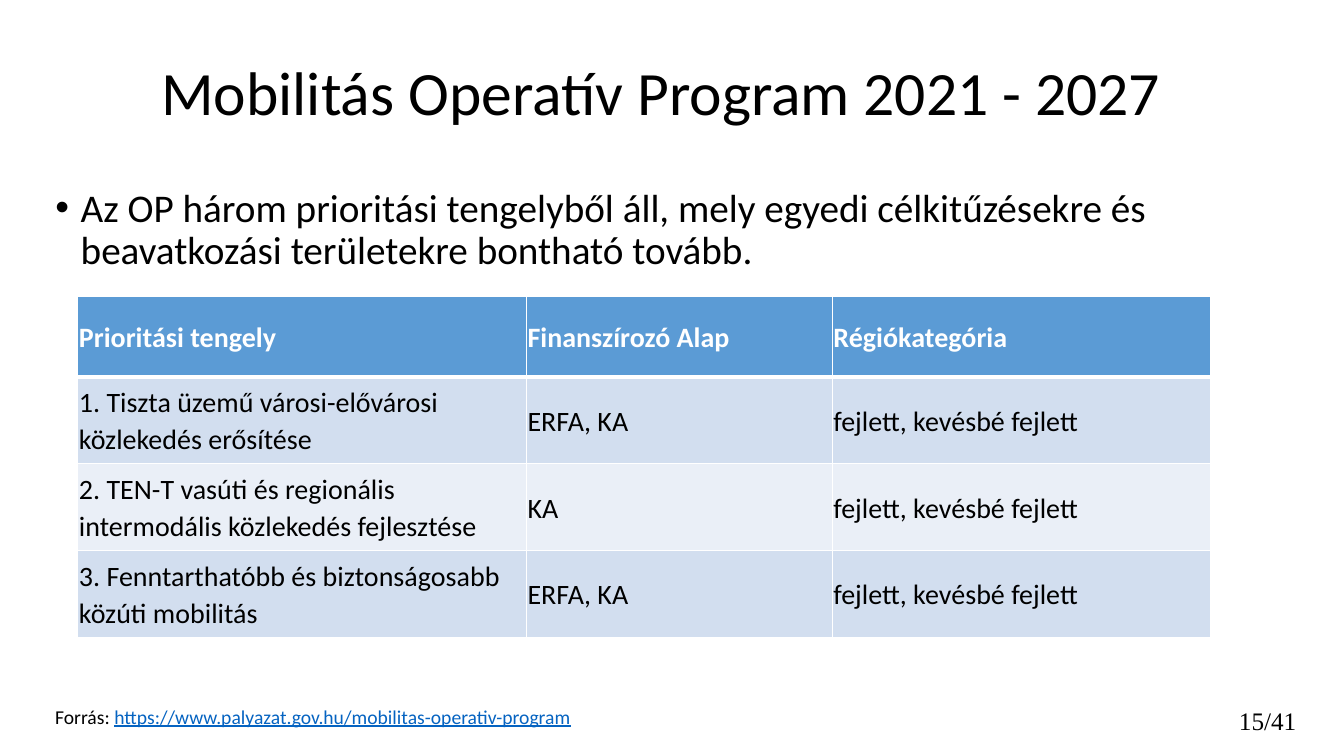
from dataclasses import dataclass

from lxml.etree import SubElement
from pptx import Presentation
from pptx.dml.color import RGBColor
from pptx.enum.text import MSO_ANCHOR, MSO_AUTO_SIZE, PP_ALIGN
from pptx.oxml.ns import qn
from pptx.util import Cm, Pt


@dataclass(frozen=True)
class Theme:
    """Colours, fonts and type sizes of the deck."""
    text: str = "000000"
    white: str = "FFFFFF"
    header: str = "5B9BD5"
    bands: tuple = ("D2DEEF", "EAEFF7")
    link: str = "0563C1"
    font: str = "Calibri"
    number_font: str = "Times New Roman"
    title: int = 44
    body: int = 28
    table: int = 20
    number: int = 18
    source: int = 14


THEME = Theme()
ROWS = [
    ("Prioritási tengely", "Finanszírozó Alap", "Régiókategória"),
    ("1. Tiszta üzemű városi-elővárosi közlekedés erősítése", "ERFA, KA", "fejlett, kevésbé fejlett"),
    ("2. TEN-T vasúti és regionális intermodális közlekedés fejlesztése", "KA", "fejlett, kevésbé fejlett"),
    ("3. Fenntarthatóbb és biztonságosabb közúti mobilitás", "ERFA, KA", "fejlett, kevésbé fejlett"),
]
COLUMN_SHARES = (0.396, 0.27, 0.334)


def add_run(p, text, size, color=THEME.text, font=THEME.font, bold=False, underline=False):
    """Append a formatted run to a paragraph."""
    r = p.add_run()
    r.text = text
    r.font.name, r.font.size = font, Pt(size)
    r.font.bold, r.font.underline = bold, underline
    r.font.color.rgb = RGBColor.from_string(color)


def place(sp, box, anchor=MSO_ANCHOR.TOP):
    """Move a text shape to its box and return its first paragraph."""
    sp.left, sp.top, sp.width, sp.height = map(Cm, box)
    tf = sp.text_frame
    tf.word_wrap, tf.auto_size, tf.vertical_anchor = True, MSO_AUTO_SIZE.NONE, anchor
    p = tf.paragraphs[0]
    p.space_before = Pt(0)
    return p


def add_title(s, box, text):
    """Fill the title placeholder."""
    p = place(s.shapes.title, box, MSO_ANCHOR.MIDDLE)
    p.alignment, p.line_spacing = PP_ALIGN.LEFT, 0.9
    add_run(p, text, THEME.title)


def add_body(s, box, text):
    """Fill the body placeholder with one bullet."""
    p = place(s.placeholders[1], box)
    p.line_spacing = 0.9
    pPr = p._p.get_or_add_pPr()
    pPr.set("marL", str(Cm(0.64)))
    pPr.set("indent", str(-Cm(0.64)))
    SubElement(pPr, qn("a:buFont"), typeface="Arial")
    SubElement(pPr, qn("a:buChar"), char="•")
    add_run(p, text, THEME.body)


def add_borders(cell, bottom):
    """Draw white lines around a cell."""
    tcPr = cell._tc.get_or_add_tcPr()
    for side, width in (("lnL", 1), ("lnR", 1), ("lnT", 1), ("lnB", bottom)):
        ln = SubElement(tcPr, qn(f"a:{side}"), w=str(Pt(width)))
        fill = SubElement(ln, qn("a:solidFill"))
        SubElement(fill, qn("a:srgbClr"), val=THEME.white)


def fill_cell(cell, text, row):
    """Write and format one table cell."""
    header = row == 0
    cell.margin_left = cell.margin_right = cell.margin_top = cell.margin_bottom = Cm(0.03)
    cell.vertical_anchor = MSO_ANCHOR.MIDDLE
    add_borders(cell, 3 if header else 1)
    cell.fill.solid()
    color = THEME.header if header else THEME.bands[(row - 1) % 2]
    cell.fill.fore_color.rgb = RGBColor.from_string(color)
    p = cell.text_frame.paragraphs[0]
    p.line_spacing, p.space_after = 1.07, Pt(8)
    add_run(p, text, THEME.table, THEME.white if header else THEME.text, bold=header)


def add_axes_table(s, box, rows, header_height=2.03):
    """Build the table of priority axes."""
    width, height = box[2:]
    table = s.shapes.add_table(len(rows), len(rows[0]), *map(Cm, box)).table
    for column, share in zip(table.columns, COLUMN_SHARES):
        column.width = Cm(width * share)
    row_height = (height - header_height) / (len(rows) - 1)
    for i, texts in enumerate(rows):
        table.rows[i].height = Cm(row_height if i else header_height)
        for j, text in enumerate(texts):
            fill_cell(table.cell(i, j), text, i)


def add_source(s, box, label, address):
    """Add the source line."""
    p = place(s.shapes.add_textbox(0, 0, 0, 0), box)
    add_run(p, label, THEME.source)
    add_run(p, address, THEME.source, THEME.link, underline=True)


def add_page_number(s, box, text):
    """Add the page count in the corner."""
    p = place(s.shapes.add_textbox(0, 0, 0, 0), box, MSO_ANCHOR.BOTTOM)
    p.alignment = PP_ALIGN.RIGHT
    add_run(p, text, THEME.number, font=THEME.number_font)


def main():
    """Build and save the slide."""
    prs = Presentation()
    prs.slide_width, prs.slide_height = Cm(33.87), Cm(19.05)
    s = prs.slides.add_slide(prs.slide_layouts[1])
    add_title(s, (3.81, 1.02, 27.74, 2.79), "Mobilitás Operatív Program 2021 - 2027")
    add_body(s, (1.14, 4.62, 30.4, 12.22),
             "Az OP három prioritási tengelyből áll, mely egyedi célkitűzésekre és "
             "beavatkozási területekre bontható tovább.")
    add_axes_table(s, (1.96, 7.47, 28.55, 8.6), ROWS)
    add_source(s, (1.14, 17.63, 14.05, 0.86), "Forrás: ",
               "https://www.palyazat.gov.hu/mobilitas-operativ-program")
    add_page_number(s, (27.64, 17.4, 5.28, 1.27), "15/41")
    prs.save("out.pptx")


if __name__ == "__main__":
    main()
